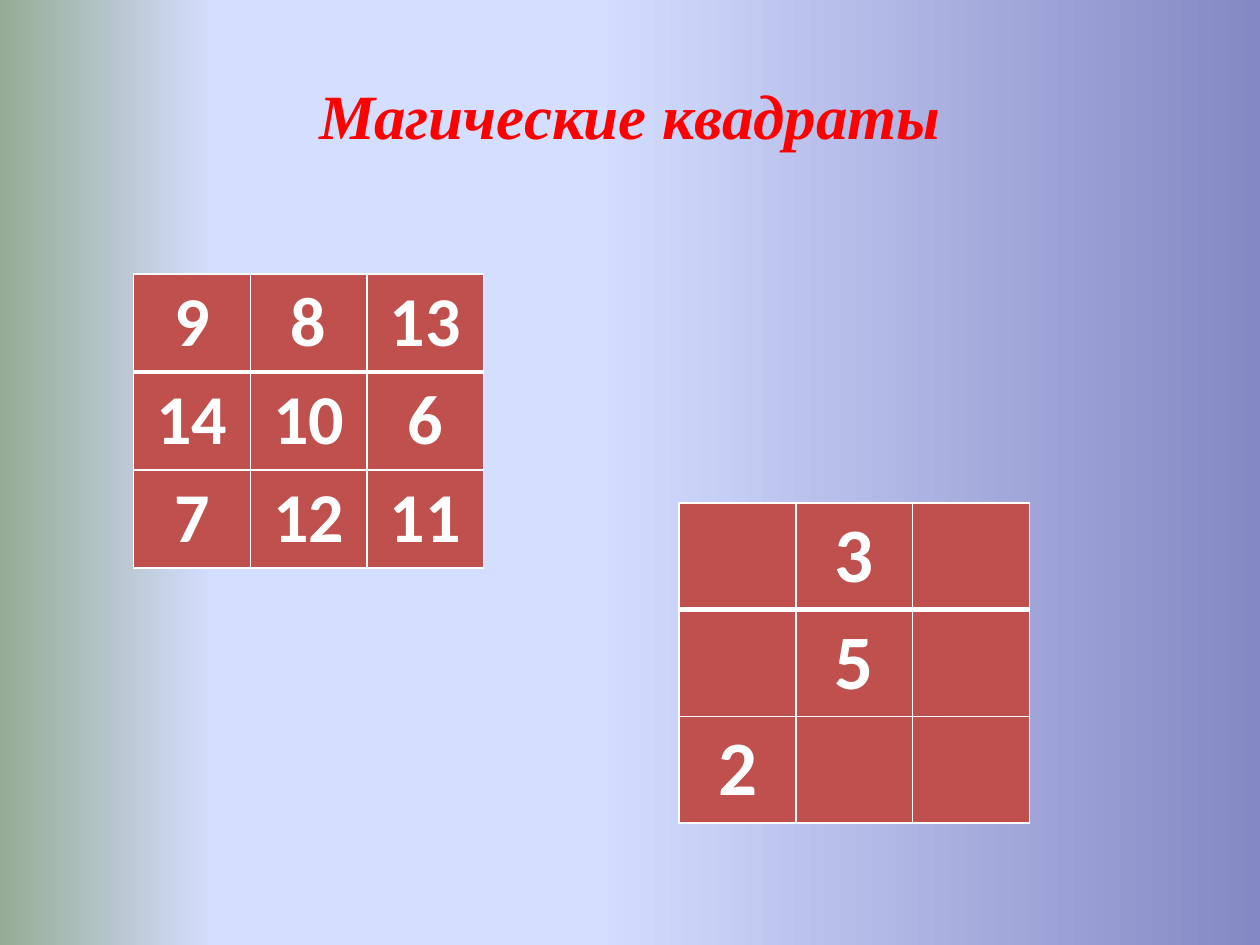
from lxml.etree import SubElement
from pptx import Presentation
from pptx.dml.color import RGBColor
from pptx.enum.text import MSO_ANCHOR, PP_ALIGN
from pptx.oxml import parse_xml
from pptx.oxml.ns import nsdecls, qn
from pptx.util import Inches, Pt

RED = RGBColor(0xFF, 0x00, 0x00)
BRICK = RGBColor(0xC0, 0x50, 0x4D)
WHITE = RGBColor(0xFF, 0xFF, 0xFF)
INDIGO = RGBColor(0x84, 0x88, 0xC4)
PALE = RGBColor(0xD4, 0xDE, 0xFF)
SAGE = RGBColor(0x96, 0xAB, 0x94)

WIDE, HIGH = 10, 7.5


def write(frame, text, font="Calibri", size=40, color=WHITE, italic=False):
    """Put one bold, centred line into a text frame."""
    para = frame.paragraphs[0]
    para.alignment = PP_ALIGN.CENTER
    run = para.add_run()
    run.text = text
    face = run.font
    face.name, face.size, face.bold, face.italic = font, Pt(size), True, italic
    face.color.rgb = color


class Deck:
    def __init__(self):
        self.show = Presentation()
        self.show.slide_width, self.show.slide_height = Inches(WIDE), Inches(HIGH)
        self.slide = self.show.slides.add_slide(self.show.slide_layouts[5])

    def back(self, stops, angle):
        """Fill the background with a linear gradient of (percent, colour) stops."""
        fill = self.slide.background.fill
        fill.gradient()
        fill.gradient_angle = angle
        marks = self.slide.element.find(".//" + qn("a:gsLst"))
        for old in list(marks):
            marks.remove(old)
        for place, color in stops:
            mark = SubElement(marks, qn("a:gs"), pos=str(place * 1000))
            SubElement(mark, qn("a:srgbClr"), val=str(color))

    def title(self, text, left, top, width, height):
        """Fill the title placeholder; sizes are shares of the slide."""
        box = self.slide.shapes.title
        box.left, box.width = Inches(left * WIDE), Inches(width * WIDE)
        box.top, box.height = Inches(top * HIGH), Inches(height * HIGH)
        frame = box.text_frame
        frame.vertical_anchor = MSO_ANCHOR.TOP
        frame.margin_top = Inches(0.31)
        write(frame, text, "Times New Roman", 36, RED, True)

    def edge(self, cell, top, bottom):
        """Draw white borders, in points, round a cell."""
        sides = {"L": 1, "R": 1, "T": top, "B": bottom}
        for spot, (side, width) in enumerate(sides.items()):
            line = parse_xml(
                f'<a:ln{side} {nsdecls("a")} w="{Pt(width)}"><a:solidFill>'
                f'<a:srgbClr val="{WHITE}"/></a:solidFill></a:ln{side}>')
            cell._tc.get_or_add_tcPr().insert(spot, line)

    def square(self, rows, left, top, width, height, size):
        """Add a table of equal cells; sizes are shares of the slide."""
        table = self.slide.shapes.add_table(
            len(rows), len(rows[0]), Inches(left * WIDE), Inches(top * HIGH),
            Inches(width * WIDE), Inches(height * HIGH)).table
        for r, row in enumerate(rows):
            for c, value in enumerate(row):
                cell = table.cell(r, c)
                cell.fill.solid()
                cell.fill.fore_color.rgb = BRICK
                self.edge(cell, 3 if r == 1 else 1, 3 if r == 0 else 1)
                if value:
                    write(cell.text_frame, value, size=size)


def main():
    deck = Deck()

    # Background and heading
    deck.back([(0, INDIGO), (53, PALE), (83, PALE), (100, SAGE)], 180)
    deck.title("Магические квадраты", 0.05, 0.04, 0.9, 0.93)

    # Solved square, then the one to complete
    solved = [("9", "8", "13"), ("14", "10", "6"), ("7", "12", "11")]
    puzzle = [("", "3", ""), ("", "5", ""), ("2", "", "")]
    deck.square(solved, 0.106, 0.29, 0.278, 0.31, 40)
    deck.square(puzzle, 0.539, 0.532, 0.278, 0.338, 44)

    deck.show.save("out.pptx")


if __name__ == "__main__":
    main()
